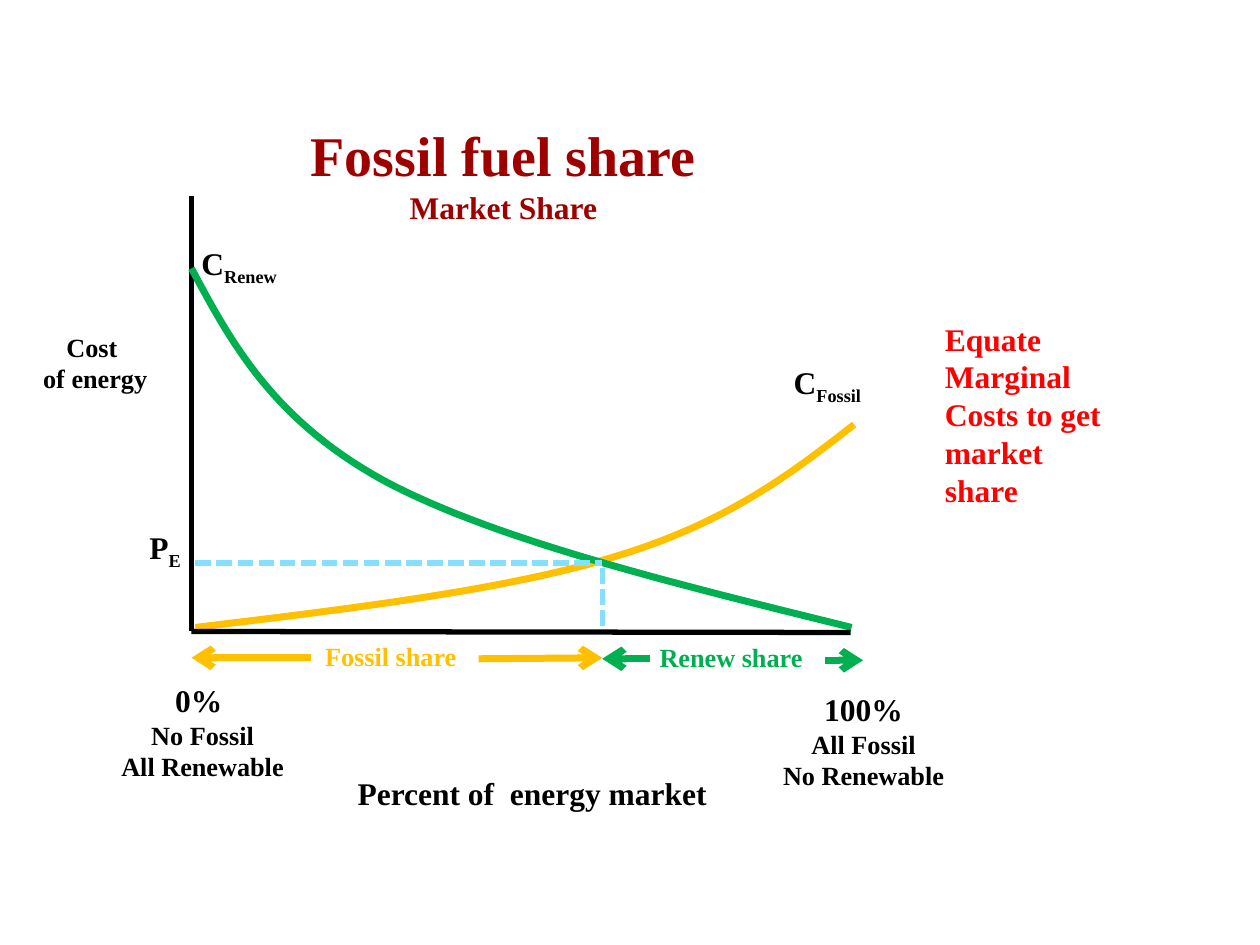
from lxml import etree
from pptx import Presentation
from pptx import util as u
from pptx.dml.color import RGBColor
from pptx.enum import dml, shapes, text
from pptx.oxml.ns import qn

BLACK = RGBColor(0x00, 0x00, 0x00)
DARK_RED = RGBColor(0x9E, 0x00, 0x00)
RED = RGBColor(0xFF, 0x00, 0x00)
FOSSIL = RGBColor(0xFF, 0xC0, 0x00)
RENEW = RGBColor(0x00, 0xB0, 0x50)
GUIDE = RGBColor(0x85, 0xE0, 0xFF)

FONT = "Times New Roman"
CENTER = text.PP_ALIGN.CENTER
LEFT = text.PP_ALIGN.LEFT

# Key positions in centimetres
AXIS_X, AXIS_TOP, AXIS_Y, AXIS_END = 3.86, 3.96, 12.73, 17.15
PRICE_X, PRICE_Y = 12.14, 11.35


def add_text(slide, lines, left, top, width, height=0.97, *, sizes=(18,),
             color=BLACK, align=LEFT, wrap=True, subscript=None):
    """Add bold lines; the last size also serves any lines after it."""
    box = slide.shapes.add_textbox(u.Cm(left), u.Cm(top), u.Cm(width), u.Cm(height))
    frame = box.text_frame
    frame.word_wrap = wrap
    for index, line in enumerate(lines):
        paragraph = frame.paragraphs[0] if index == 0 else frame.add_paragraph()
        paragraph.alignment = align
        for part in (line, subscript):
            if part is None:
                continue
            run = paragraph.add_run()
            run.text = part
            run.font.name = FONT
            run.font.size = u.Pt(sizes[min(index, len(sizes) - 1)])
            run.font.bold = True
            run.font.color.rgb = color
            if part is subscript:
                run._r.get_or_add_rPr().set("baseline", "-25000")
    return box


def add_line(slide, start, end, color, width=3, *, dashed=False, arrow=False):
    line = slide.shapes.add_connector(
        shapes.MSO_CONNECTOR.STRAIGHT, *(u.Cm(value) for value in (*start, *end)))
    line.line.color.rgb = color
    line.line.width = u.Pt(width)
    if dashed:
        line.line.dash_style = dml.MSO_LINE.SQUARE_DOT
    if arrow:
        etree.SubElement(line.line._get_or_add_ln(), qn("a:tailEnd"), type="arrow")
    etree.SubElement(line._element.spPr, qn("a:effectLst"))
    return line


def bezier_point(points, t):
    weights = ((1 - t) ** 3, 3 * t * (1 - t) ** 2, 3 * t ** 2 * (1 - t), t ** 3)
    return tuple(u.Cm(sum(w * point[axis] for w, point in zip(weights, points)))
                 for axis in (0, 1))


def add_curve(slide, points, color, steps=30):
    """Draw a chain of cubic Bezier segments as a fine open outline."""
    vertices = [bezier_point(points[first:first + 4], step / steps)
                for first in range(0, len(points) - 1, 3)
                for step in range(1, steps + 1)]
    builder = slide.shapes.build_freeform(u.Cm(points[0][0]), u.Cm(points[0][1]))
    builder.add_line_segments(vertices, close=False)
    curve = builder.convert_to_shape()
    curve.shadow.inherit = False
    curve.fill.background()
    curve.line.color.rgb = color
    curve.line.width = u.Pt(4)


def main():
    presentation = Presentation()
    presentation.slide_width, presentation.slide_height = u.Cm(25.4), u.Cm(19.05)
    slide = presentation.slides.add_slide(presentation.slide_layouts[6])

    # Title and takeaway
    add_text(slide, ["Fossil fuel share", "Market Share"], 5.97, 2.31, 8.36, 2.39,
             sizes=(32, 18), color=DARK_RED, align=CENTER, wrap=False)
    add_text(slide, ["Equate Marginal Costs to get market share"],
             18.8, 6.32, 3.89, 4.11, color=RED)

    # Vertical axis and cost curves
    add_line(slide, (AXIS_X, AXIS_TOP), (AXIS_X, AXIS_Y), BLACK)
    add_curve(slide, [(17.22, 8.56), (15.95, 9.55), (14.68, 10.52), (12.47, 11.2),
                      (10.26, 11.89), (7.09, 12.27), (3.94, 12.65)], FOSSIL)
    add_curve(slide, [(AXIS_X, 5.41), (4.67, 6.93), (5.51, 8.46), (7.72, 9.68),
                      (9.93, 10.87), (13.56, 11.76), (17.17, 12.65)], RENEW)

    # Equilibrium guides and horizontal axis
    add_line(slide, (3.94, PRICE_Y), (PRICE_X, PRICE_Y), GUIDE, dashed=True)
    add_line(slide, (PRICE_X, 12.62), (PRICE_X, PRICE_Y), GUIDE, dashed=True)
    add_line(slide, (AXIS_X, AXIS_Y), (AXIS_END, 12.75), BLACK)

    # Curve and price labels
    add_text(slide, ["C"], 15.75, 7.19, 1.91, subscript="Fossil")
    add_text(slide, ["C"], 3.81, 4.8, 2.13, subscript="Renew")
    add_text(slide, ["P"], 1.83, 10.52, 3, align=CENTER, subscript="E")

    # Axis labels
    add_text(slide, ["Cost ", "of energy"], 0.51, 6.55, 2.82, sizes=(15,), align=CENTER)
    add_text(slide, ["Percent of  energy market"], 6.96, 15.47, 9.25)
    add_text(slide, ["0% ", "No Fossil", "All Renewable"], 1.75, 13.61, 4.67,
             sizes=(18, 15), align=CENTER)
    add_text(slide, ["100%", "All Fossil", "No Renewable"], 14.83, 13.79, 5.16,
             sizes=(18, 15), align=CENTER)

    # Market shares with arrows pointing outwards
    for label, left, top, color, arrows in (
        ("Fossil share ", 5.61, 12.78, FOSSIL,
         [((6.27, 13.26), (AXIS_X, 13.26)), ((9.65, 13.28), (PRICE_X, 13.26))]),
        ("Renew share ", 12.47, 12.8, RENEW,
         [((13.11, 13.28), (PRICE_X, 13.28)), ((16.64, 13.31), (17.4, 13.31))]),
    ):
        add_text(slide, [label], left, top, 4.67, sizes=(15,), color=color, align=CENTER)
        for start, end in arrows:
            add_line(slide, start, end, color, 4, arrow=True)

    presentation.save("out.pptx")


if __name__ == "__main__":
    main()
